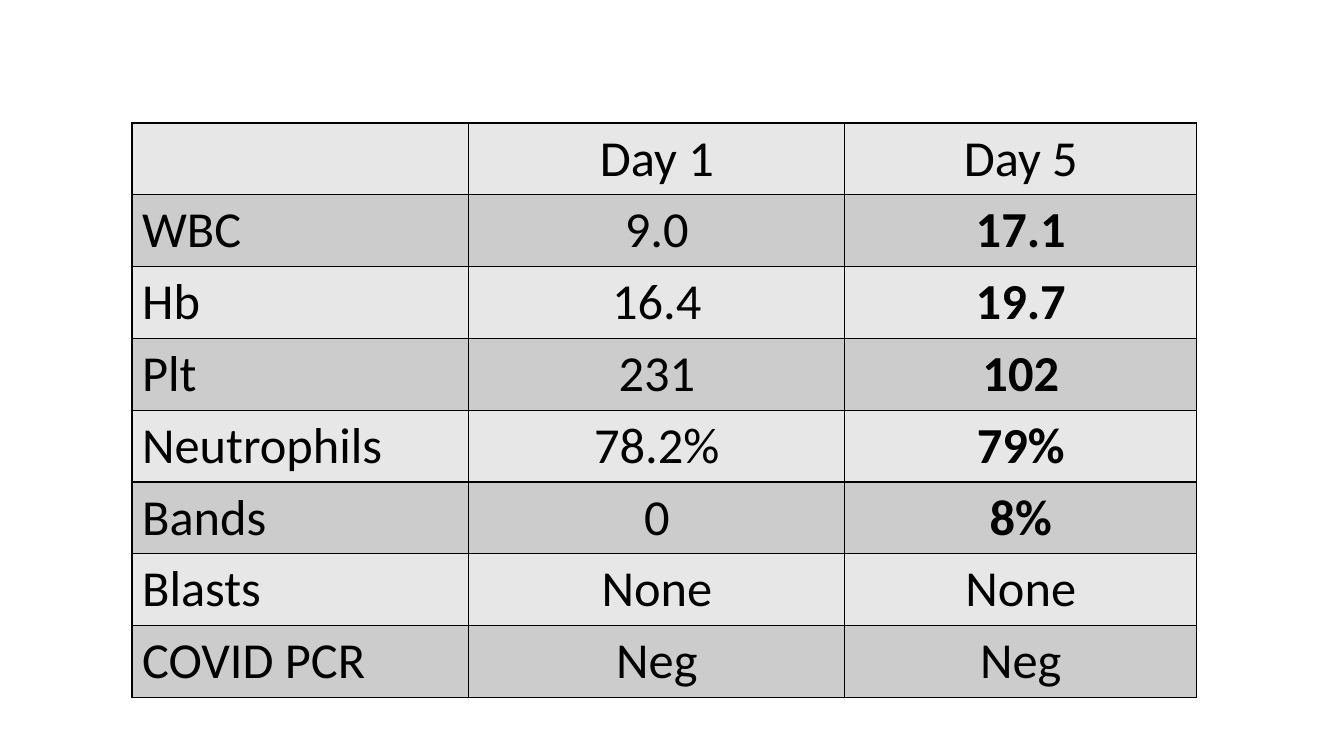
from lxml.etree import SubElement
from pptx import Presentation
from pptx.dml.color import RGBColor
from pptx.enum.text import PP_ALIGN
from pptx.oxml.ns import qn
from pptx.util import Inches, Pt

HEADER = ("", "Day 1", "Day 5")
LAB_RESULTS = [
    ("WBC", "9.0", "17.1"),
    ("Hb", "16.4", "19.7"),
    ("Plt", "231", "102"),
    ("Neutrophils", "78.2%", "79%"),
    ("Bands", "0", "8%"),
    ("Blasts", "None", "None"),
    ("COVID PCR", "Neg", "Neg"),
]
BOLD_DAY_5 = {"WBC", "Hb", "Plt", "Neutrophils", "Bands"}

BLACK = RGBColor(0x00, 0x00, 0x00)
BANDS = (RGBColor(0xE7, 0xE7, 0xE7), RGBColor(0xCC, 0xCC, 0xCC))
LEFT, TOP = 1.31, 1.22
COLUMN_WIDTHS = (3.34, 3.73, 3.49)
ROW_HEIGHT = 0.7


def add_borders(cell):
    properties = cell._tc.get_or_add_tcPr()
    for position, side in enumerate(("lnL", "lnR", "lnT", "lnB")):
        border = SubElement(properties, qn(f"a:{side}"), w=str(Pt(1)))
        fill = SubElement(border, qn("a:solidFill"))
        SubElement(fill, qn("a:srgbClr"), val=str(BLACK))
        properties.insert(position, border)  # borders precede the cell fill


def main():
    prs = Presentation()
    prs.slide_width, prs.slide_height = Inches(13.33), Inches(7.5)
    slide = prs.slides.add_slide(prs.slide_layouts[6])

    rows = [HEADER, *LAB_RESULTS]
    table = slide.shapes.add_table(
        len(rows), len(HEADER), Inches(LEFT), Inches(TOP),
        Inches(sum(COLUMN_WIDTHS)), Inches(ROW_HEIGHT * len(rows))).table
    table.first_row = table.horz_banding = False
    for column, width in zip(table.columns, COLUMN_WIDTHS):
        column.width = Inches(width)

    for r, row in enumerate(rows):
        for c, value in enumerate(row):
            cell = table.cell(r, c)
            cell.fill.solid()
            cell.fill.fore_color.rgb = BANDS[r % 2]
            add_borders(cell)
            paragraph = cell.text_frame.paragraphs[0]
            paragraph.text = value
            paragraph.alignment = PP_ALIGN.CENTER if c else PP_ALIGN.LEFT
            font = paragraph.font
            font.name, font.size = "Calibri", Pt(36)
            font.color.rgb = BLACK
            font.bold = c == 2 and row[0] in BOLD_DAY_5

    prs.save("out.pptx")


if __name__ == "__main__":
    main()
